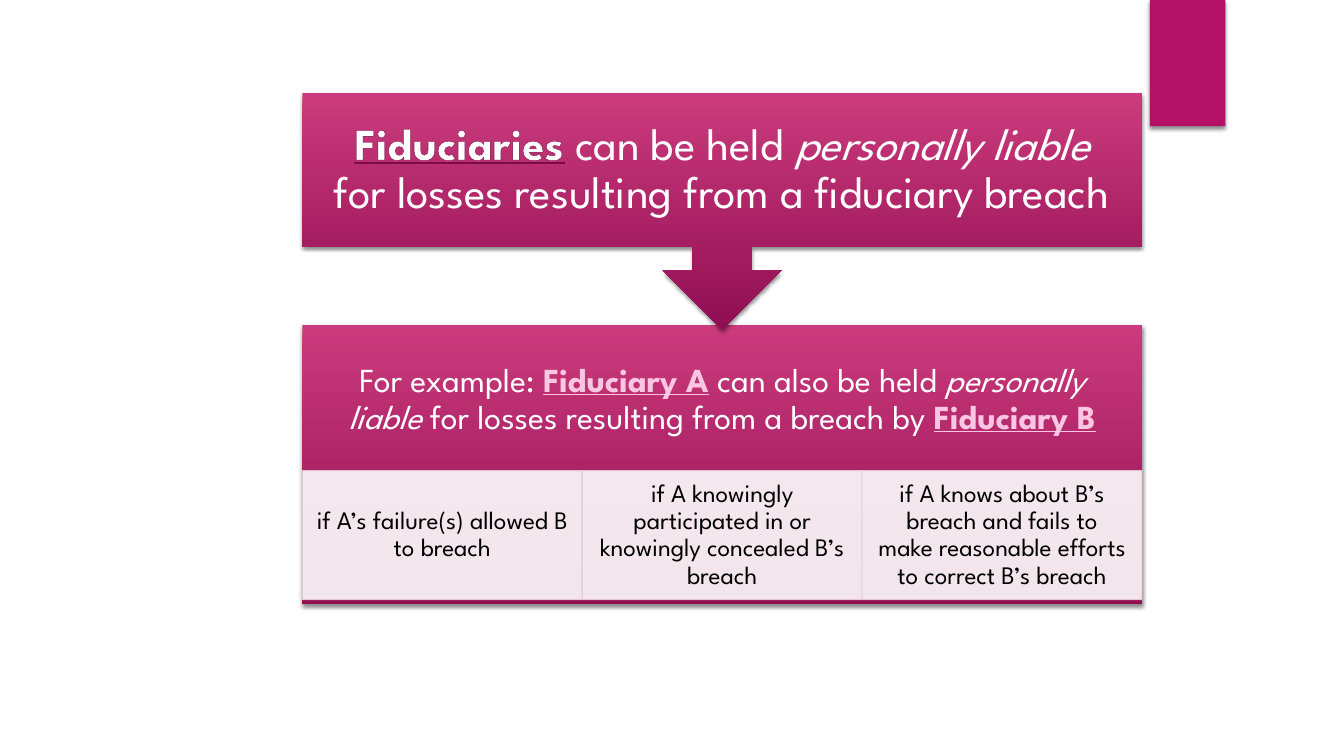
from lxml.etree import SubElement
from pptx import Presentation
from pptx.dml.color import RGBColor
from pptx.enum.shapes import MSO_SHAPE as Preset
from pptx.enum.text import MSO_ANCHOR as Anchor, PP_ALIGN as Align
from pptx.oxml.ns import qn
from pptx.util import Cm, Pt

COLORS = {
    "accent": "B31166", "light": "CB3B7C", "dark": "900E52",
    "white": "FFFFFF", "black": "000000", "pink": "FAC6E1",
    "outline": "7C0C47", "cell": "FDFDFD", "border": "E5CCD3",
}
FONT = "League Spartan"
LEFT, WIDTH = 7.62, 21.16


def add_panel(preset, left, top, width, height, gradient):
    shape = slide.shapes.add_shape(preset, Cm(left), Cm(top), Cm(width), Cm(height))
    if gradient:
        shape.fill.gradient()
        shape.fill.gradient_angle = 270
        for stop, position, name in zip(shape.fill.gradient_stops, (0, 1), ("light", "dark")):
            stop.position = position
            stop.color.rgb = RGBColor.from_string(COLORS[name])
    else:
        shape.fill.solid()
        shape.fill.fore_color.rgb = RGBColor.from_string(COLORS["accent"])
    shape.line.fill.background()
    shape.shadow.inherit = False
    effects = shape._element.spPr.find(qn("a:effectLst"))
    shadow = SubElement(effects, qn("a:outerShdw"), blurRad=str(Pt(3)), dist=str(Pt(2)),
                        dir="5400000", rotWithShape="0")
    color = SubElement(shadow, qn("a:srgbClr"), val=COLORS["black"])
    SubElement(color, qn("a:alpha"), val="45000")
    return shape


def write_text(shape, runs, size, side_inset, end_inset):
    frame = shape.text_frame
    frame.word_wrap = True
    frame.vertical_anchor = Anchor.MIDDLE
    frame.margin_left = frame.margin_right = Cm(side_inset)
    frame.margin_top = frame.margin_bottom = Cm(end_inset)
    paragraph = frame.paragraphs[0]
    paragraph.alignment = Align.CENTER
    paragraph.line_spacing = 0.9
    for text, color, style in runs:
        run = paragraph.add_run()
        run.text = text
        run.font.name = FONT
        run.font.size = Pt(size)
        run.font.color.rgb = RGBColor.from_string(COLORS[color])
        run.font.italic = style == "italic"
        if style == "term":
            run.font.bold = True
            run.font.underline = True
            properties = run.font._element
            outline = SubElement(properties, qn("a:ln"), w=str(Pt(0.5)))
            fill = SubElement(outline, qn("a:solidFill"))
            SubElement(fill, qn("a:srgbClr"), val=COLORS["outline"])
            properties.insert(0, outline)


presentation = Presentation()
presentation.slide_width = Cm(33.87)
presentation.slide_height = Cm(19.05)
slide = presentation.slides.add_slide(presentation.slide_layouts[6])

add_panel(Preset.RECTANGLE, 28.98, 0, 1.9, 3.18, False)
add_panel(Preset.RECTANGLE, LEFT, 8.18, WIDTH, 7.04, True)

example = slide.shapes.add_textbox(Cm(LEFT), Cm(8.18), Cm(WIDTH), Cm(3.8))
write_text(example, [
    ("For example: ", "white", ""),
    ("Fiduciary A", "pink", "term"),
    (" can also be held ", "white", ""),
    ("personally liable ", "white", "italic"),
    ("for losses resulting from a breach by ", "white", ""),
    ("Fiduciary B", "pink", "term"),
], 24, 0.47, 0.47)

conditions = [
    "if A’s failure(s) allowed B to breach",
    "if A knowingly participated in or knowingly concealed B’s breach",
    "if A knows about B’s breach and fails to make reasonable efforts to correct B’s breach",
]
cell_width = WIDTH / len(conditions)
for index, condition in enumerate(conditions):
    cell = slide.shapes.add_shape(Preset.RECTANGLE, Cm(LEFT + index * cell_width), Cm(11.86),
                                  Cm(cell_width), Cm(3.25))
    cell.shadow.inherit = False
    cell.fill.solid()
    cell.fill.fore_color.rgb = RGBColor.from_string(COLORS["cell"])
    cell.line.color.rgb = RGBColor.from_string(COLORS["border"])
    cell.line.width = Pt(0.75)
    for color in cell._element.spPr.iter(qn("a:srgbClr")):
        SubElement(color, qn("a:alpha"), val="90000")
    write_text(cell, [(condition, "black", "")], 18, 0.36, 0.08)

callout = add_panel(Preset.DOWN_ARROW_CALLOUT, LEFT, 2.34, WIDTH, 5.97, True)
write_text(callout, [
    ("Fiduciaries", "white", "term"),
    (" can be held ", "white", ""),
    ("personally liable", "white", "italic"),
    (" for losses resulting from a fiduciary breach", "white", ""),
], 32, 0.63, 0.63)

presentation.save("out.pptx")
